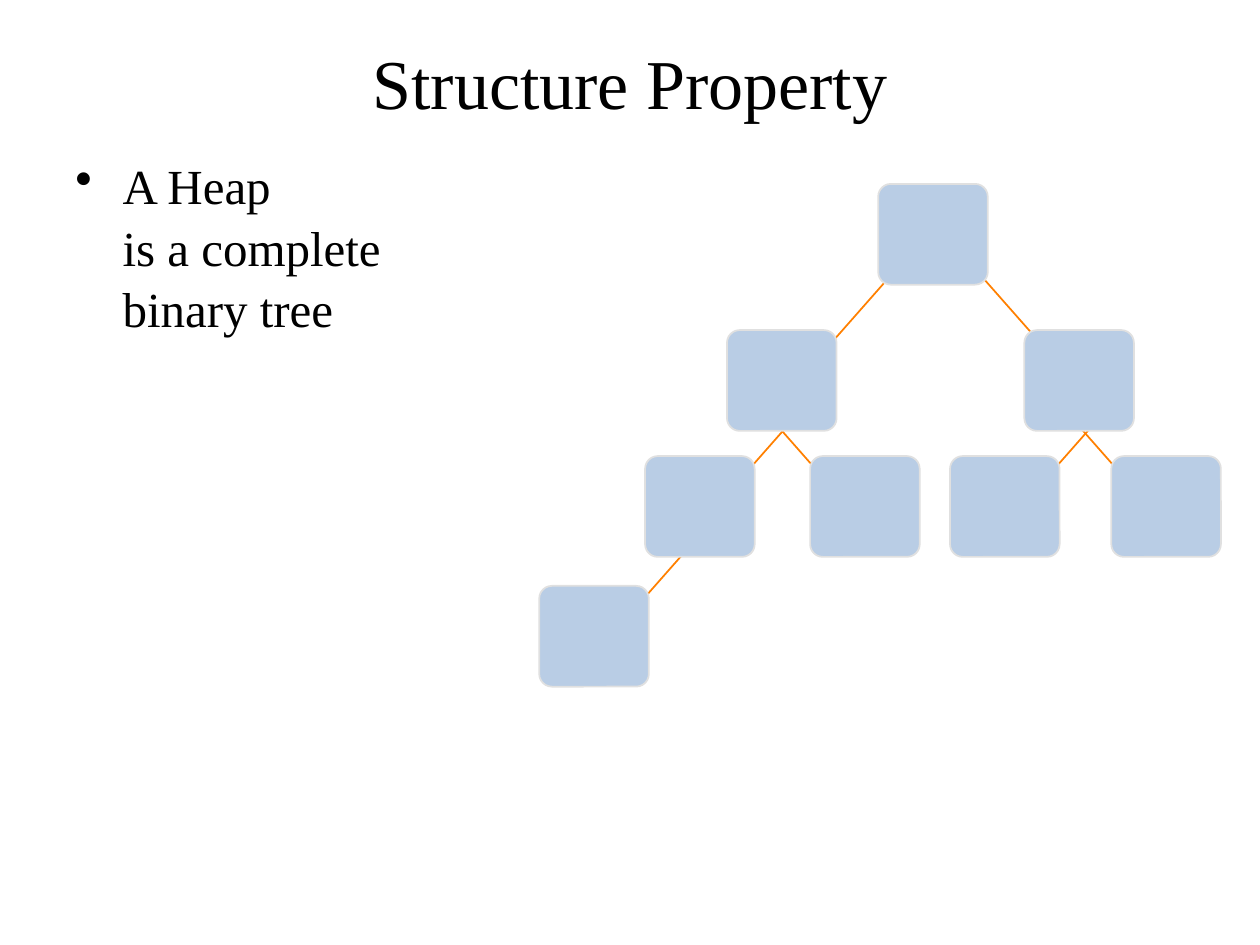
from lxml import etree
from pptx import Presentation
from pptx.dml.color import RGBColor
from pptx.enum.shapes import MSO_CONNECTOR, MSO_SHAPE
from pptx.enum.text import MSO_ANCHOR, PP_ALIGN
from pptx.oxml.ns import qn
from pptx.util import Pt

STRAIGHT = MSO_CONNECTOR.STRAIGHT
ROUNDED = MSO_SHAPE.ROUNDED_RECTANGLE
MIDDLE = MSO_ANCHOR.MIDDLE
CENTER = PP_ALIGN.CENTER

FONT = "Times New Roman"
BLACK = RGBColor(0x00, 0x00, 0x00)
NODE_FILL = RGBColor(0xB9, 0xCD, 0xE5)
NODE_LINE = RGBColor(0xE0, 0xE0, 0xE0)
EDGE_LINE = RGBColor(0xFF, 0x80, 0x00)

NODE_W, NODE_H = 62.64, 57.6
EDGE_DX, EDGE_DY = 44.4, 50.4
LEFT, RIGHT = -1, 1

# Top of each tree level and the left sides of its nodes
LEVELS = [
    (105.12, [501.84]),
    (188.64, [415.44, 585.36]),
    (260.64, [368.64, 462.96, 542.88, 635.04]),
    (334.8, [308.16]),
]
# Start of each edge and the side it descends to
EDGES = [
    (506.88, 159.84, LEFT), (559.44, 156.24, RIGHT),
    (460.08, 231.84, LEFT), (434.16, 231.84, RIGHT),
    (634.32, 231.84, LEFT), (606.24, 231.84, RIGHT),
    (399.6, 306, LEFT),
]


def add_text(s, text, top, height, size):
    box = s.shapes.add_textbox(Pt(36), Pt(top), Pt(648), Pt(height))
    tf = box.text_frame
    tf.word_wrap = True
    p = tf.paragraphs[0]
    p.text = text
    p.font.name = FONT
    p.font.size = Pt(size)
    p.font.color.rgb = BLACK
    return tf


def add_bullet(p, indent):
    pPr = p._p.get_or_add_pPr()
    pPr.set("marL", str(Pt(indent)))
    pPr.set("indent", str(-Pt(indent)))
    bullet = etree.Element(qn("a:buChar"), char="•")
    pPr.find(qn("a:defRPr")).addprevious(bullet)


def add_edge(s, x, y, side):
    line = s.shapes.add_connector(
        STRAIGHT, Pt(x), Pt(y), Pt(x + side * EDGE_DX), Pt(y + EDGE_DY))
    line.line.color.rgb = EDGE_LINE
    line.line.width = Pt(1)
    etree.SubElement(line._element.spPr, qn("a:effectLst"))


def add_node(s, x, y):
    sp = s.shapes.add_shape(ROUNDED, Pt(x), Pt(y), Pt(NODE_W), Pt(NODE_H))
    sp.adjustments[0] = 0.126
    sp.shadow.inherit = False
    sp.fill.solid()
    sp.fill.fore_color.rgb = NODE_FILL
    sp.line.color.rgb = NODE_LINE
    sp.line.width = Pt(1)


def main():
    prs = Presentation()
    prs.slide_width, prs.slide_height = Pt(720), Pt(540)
    s = prs.slides.add_slide(prs.slide_layouts[6])

    # Title
    tf = add_text(s, "Structure Property", 21.6, 50.4, 40)
    tf.vertical_anchor = MIDDLE
    tf.paragraphs[0].alignment = CENTER

    # Definition
    tf = add_text(s, "A Heap\vis a complete\vbinary tree", 84.24, 398.16, 28)
    p = tf.paragraphs[0]
    p.line_spacing = 1.04
    p.space_before = Pt(5.6)
    add_bullet(p, 27)

    # Binary tree: edges lie behind the nodes
    for x, y, side in EDGES:
        add_edge(s, x, y, side)
    for top, lefts in LEVELS:
        for left in lefts:
            add_node(s, left, top)

    prs.save("out.pptx")


if __name__ == "__main__":
    main()
